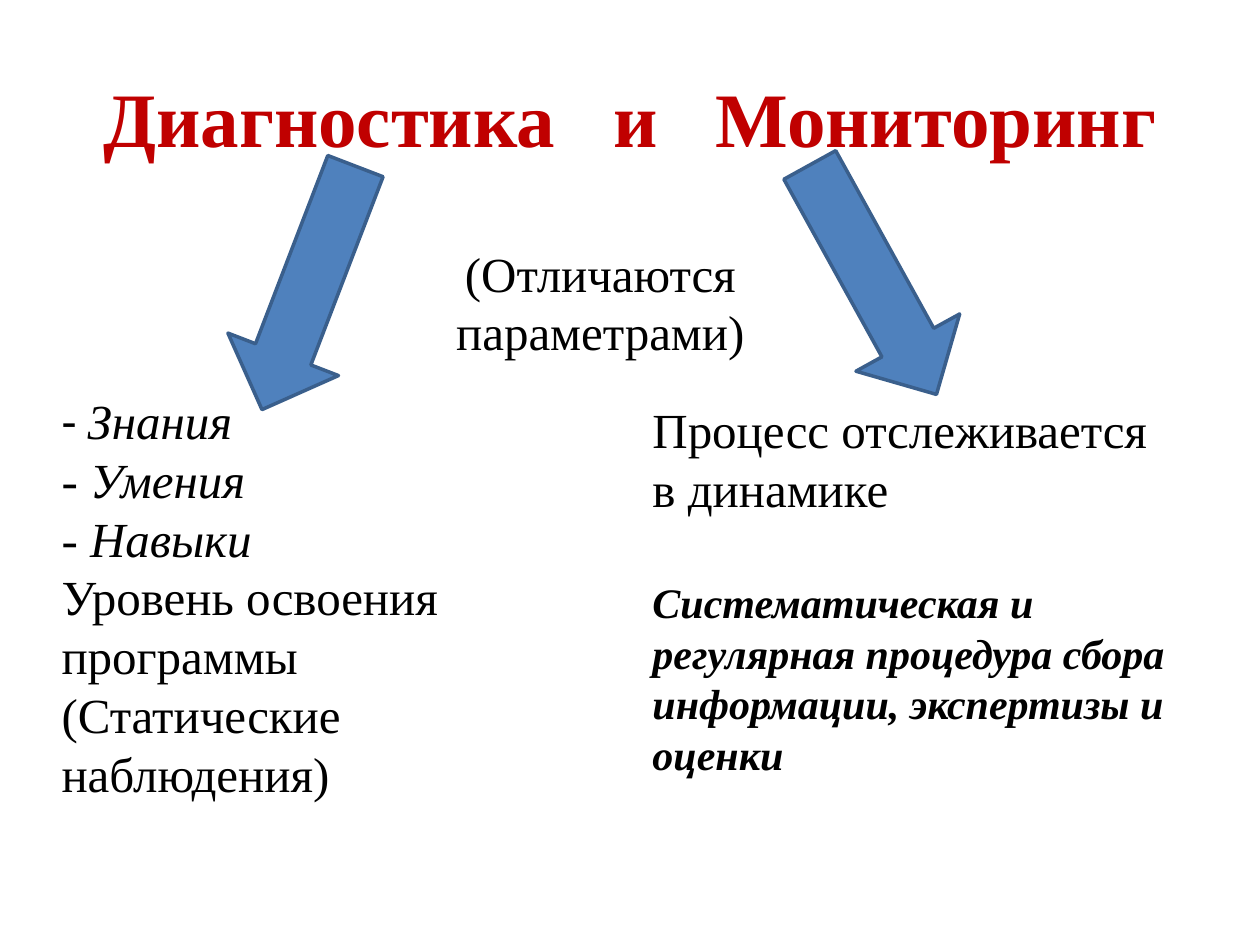
from dataclasses import dataclass

from pptx import Presentation
from pptx.dml.color import RGBColor
from pptx.enum.shapes import MSO_SHAPE
from pptx.enum.text import MSO_ANCHOR, MSO_AUTO_SIZE, PP_ALIGN
from pptx.util import Inches, Pt


@dataclass(frozen=True)
class Theme:
    """Colours, fonts and type sizes of the slide."""
    title_color: RGBColor = RGBColor.from_string("C00000")
    text_color: RGBColor = RGBColor.from_string("000000")
    arrow_fill: RGBColor = RGBColor.from_string("4F81BD")
    arrow_line: RGBColor = RGBColor.from_string("3A5F8C")
    font: str = "Times New Roman"
    dash_font: str = "Calibri"
    title_size: Pt = Pt(44)
    body_size: Pt = Pt(28)
    definition_size: Pt = Pt(24)
    title_gap: Pt = Pt(22)
    arrow_width: Pt = Pt(2)


THEME = Theme()


def apply_format(target, values):
    """Set every attribute named in values on target."""
    for name, value in values.items():
        setattr(target, name, value)


def add_run(paragraph, text, color=THEME.text_color, **values):
    """Append a run in the theme font, changed by the given font values."""
    run = paragraph.add_run()
    run.text = text
    apply_format(run.font, {"name": THEME.font, "size": THEME.body_size, **values})
    run.font.color.rgb = color
    return run


def add_frame(slide, box, **values):
    """Add a wrapping text box and return its text frame."""
    frame = slide.shapes.add_textbox(*map(Inches, box)).text_frame
    apply_format(frame, {"word_wrap": True, **values})
    return frame


def add_title(slide, box, words):
    """Add the centred title with widened spaces between its words."""
    frame = add_frame(slide, box, vertical_anchor=MSO_ANCHOR.MIDDLE)
    paragraph = frame.paragraphs[0]
    paragraph.alignment = PP_ALIGN.CENTER
    style = {"color": THEME.title_color, "size": THEME.title_size, "bold": True}
    for index, word in enumerate(words):
        if index:
            space = add_run(paragraph, " ", **style)
            space.font._element.set("spc", str(int(THEME.title_gap.pt * 100)))
        add_run(paragraph, word, **style)


def add_text(slide, box, paragraphs, alignment=PP_ALIGN.LEFT):
    """Add a text box whose paragraphs are lists of (text, font values) runs."""
    frame = add_frame(slide, box, auto_size=MSO_AUTO_SIZE.SHAPE_TO_FIT_TEXT)
    for index, runs in enumerate(paragraphs):
        paragraph = frame.add_paragraph() if index else frame.paragraphs[0]
        paragraph.alignment = alignment
        for text, values in runs:
            add_run(paragraph, text, **values)


def add_arrow(slide, box, rotation):
    """Add a block arrow pointing down, turned by rotation degrees."""
    arrow = slide.shapes.add_shape(MSO_SHAPE.DOWN_ARROW, *map(Inches, box))
    arrow.rotation = rotation
    arrow.shadow.inherit = False
    arrow.fill.solid()
    arrow.fill.fore_color.rgb = THEME.arrow_fill
    arrow.line.color.rgb = THEME.arrow_line
    arrow.line.width = THEME.arrow_width


def add_diagnostics(slide, box):
    """Add the column on diagnostics."""
    italic = {"italic": True}
    add_text(slide, box, [
        [("- ", {"name": THEME.dash_font}), ("Знания", italic)],
        [("- Умения", italic)],
        [("- Навыки", italic)],
        [("Уровень освоения программы", {})],
        [("(Статические наблюдения)", {})],
    ])


def add_monitoring(slide, process_box, definition_box):
    """Add the column on monitoring: the process and its definition."""
    add_text(slide, process_box, [[("Процесс отслеживается в динамике", {})]])
    definition = "Систематическая и регулярная процедура сбора информации, экспертизы и оценки"
    style = {"size": THEME.definition_size, "bold": True, "italic": True}
    add_text(slide, definition_box, [[(definition, style)]])


def main():
    """Build the slide and save it."""
    presentation = Presentation()
    apply_format(presentation, {"slide_width": Inches(10), "slide_height": Inches(7.5)})
    slide = presentation.slides.add_slide(presentation.slide_layouts[6])
    add_title(slide, (0.5, 0.3, 9, 1.25), ["Диагностика", "и", "Мониторинг"])
    add_text(slide, (2.5, 1.88, 4.53, 1.04), [[("(Отличаются параметрами)", {})]],
             PP_ALIGN.CENTER)
    add_diagnostics(slide, (0.39, 3.05, 3.91, 3.4))
    add_monitoring(slide, (5.08, 3.12, 4.14, 1.04), (5.08, 4.53, 4.41, 1.72))
    add_arrow(slide, (1.98, 1.25, 0.94, 2.07), 21)
    add_arrow(slide, (6.46, 1.18, 0.94, 2.08), 331.1)
    presentation.save("out.pptx")


if __name__ == "__main__":
    main()
